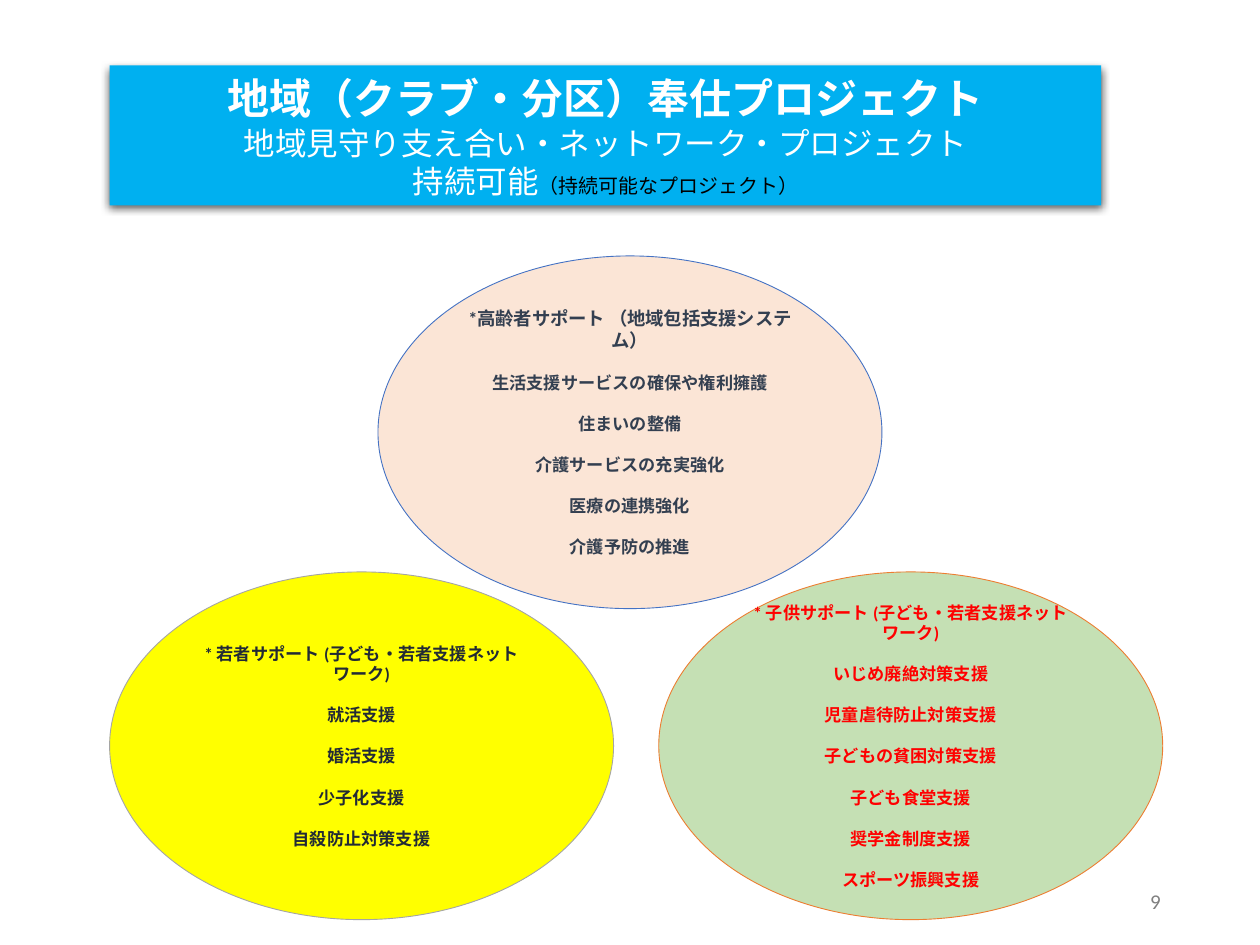
from lxml import etree
from pptx import Presentation
from pptx.dml.color import RGBColor
from pptx.enum.shapes import MSO_SHAPE
from pptx.enum.text import MSO_ANCHOR, MSO_AUTO_SIZE, PP_ALIGN
from pptx.oxml.ns import qn
from pptx.util import Cm, Pt

OVAL = MSO_SHAPE.OVAL
TOP, MIDDLE = MSO_ANCHOR.TOP, MSO_ANCHOR.MIDDLE
CENTER, RIGHT = PP_ALIGN.CENTER, PP_ALIGN.RIGHT
FIXED_SIZE = MSO_AUTO_SIZE.NONE
LATIN, JAPANESE = "Calibri", "Noto Sans CJK JP"
TITLE_LAYOUT = 5


def rgb(value):
    return RGBColor.from_string(value)


def style(font, name, size, color, bold=False):
    font.name, font.size, font.bold = name, Pt(size), bold
    font.color.rgb = rgb(color)
    east_asian = etree.SubElement(font._element, qn("a:ea"))
    east_asian.set("typeface", JAPANESE)


prs = Presentation()
prs.slide_width, prs.slide_height = Cm(25.4), Cm(19.05)
slide = prs.slides.add_slide(prs.slide_layouts[TITLE_LAYOUT])

# Title banner
banner = slide.shapes.title
banner.left, banner.top, banner.width, banner.height = Cm(2.21), Cm(1.32), Cm(19.99), Cm(2.82)
banner.fill.solid()
banner.fill.fore_color.rgb = rgb("00B0F0")
banner.shadow.inherit = False
effects = banner._element.spPr.find(qn("a:effectLst"))
shadow = etree.SubElement(effects, qn("a:outerShdw"), blurRad=str(Pt(4.5)),
                          dist=str(Pt(1.5)), dir="5400000", rotWithShape="0")
shadow_color = etree.SubElement(shadow, qn("a:srgbClr"), val="000000")
etree.SubElement(shadow_color, qn("a:alpha"), val="63000")

title_lines = [
    ("地域（クラブ・分区）奉仕プロジェクト", 24, True),
    ("地域見守り支え合い・ネットワーク・プロジェクト", 18, False),
    ("持続可能", 18, False),
]
title_frame = banner.text_frame
title_frame.auto_size = FIXED_SIZE
title_frame.word_wrap = True
title_frame.vertical_anchor = TOP
for index, (text, size, bold) in enumerate(title_lines):
    line = title_frame.paragraphs[0] if index == 0 else title_frame.add_paragraph()
    line.alignment = CENTER
    line.line_spacing = Pt(size * 1.22)
    line.space_before = Pt(0)
    style(line.font, JAPANESE, size, "FFFFFF", bold)
    line.add_run().text = text
remark = line.add_run()
remark.text = "（持続可能なプロジェクト）"
style(remark.font, JAPANESE, 11.4, "000000")

# Support areas: left, top, height, fill, outline, text colour, heading size, lines
support_areas = [
    (7.62, 5.16, 7.11, "FBE5D6", "4472C4", "333F50", 10.5,
     ["*高齢者サポート （地域包括支援システム）", "生活支援サービスの確保や権利擁護",
      "住まいの整備", "介護サービスの充実強化", "医療の連携強化", "介護予防の推進"]),
    (2.21, 11.53, 7.01, "FFFF00", "A5A5A5", "222A35", 9.8,
     ["* 若者サポート (子ども・若者支援ネットワーク)", "就活支援", "婚活支援",
      "少子化支援", "自殺防止対策支援"]),
    (13.28, 11.53, 7.01, "C5E0B4", "ED7D31", "FF0000", 9.8,
     ["* 子供サポート (子ども・若者支援ネットワーク)", "いじめ廃絶対策支援",
      "児童虐待防止対策支援", "子どもの貧困対策支援", "子ども食堂支援",
      "奨学金制度支援", "スポーツ振興支援"]),
]
for left, top, height, fill, outline, color, heading_size, lines in support_areas:
    area = slide.shapes.add_shape(OVAL, Cm(left), Cm(top), Cm(10.16), Cm(height))
    area.shadow.inherit = False
    area.fill.solid()
    area.fill.fore_color.rgb = rgb(fill)
    area.line.color.rgb = rgb(outline)
    area.line.width = Pt(0.5)
    frame = area.text_frame
    frame.word_wrap = True
    frame.vertical_anchor = MIDDLE
    for index, text in enumerate(lines):
        item = frame.paragraphs[0] if index == 0 else frame.add_paragraph()
        size = heading_size if index == 0 else 9.8
        item.text = text
        item.alignment = CENTER
        item.line_spacing = Pt(size * 1.2)
        item.space_before = Pt(11.7 if index else 0)
        style(item.font, LATIN, size, color, True)

# Page number
page_box = slide.shapes.add_textbox(Cm(17.93), Cm(17.65), Cm(5.72), Cm(1.02))
page_box.text_frame.word_wrap = True
page_box.text_frame.vertical_anchor = MIDDLE
page_number = page_box.text_frame.paragraphs[0]
page_number.text = "9"
page_number.alignment = RIGHT
style(page_number.font, LATIN, 12, "808080")

prs.save("out.pptx")
